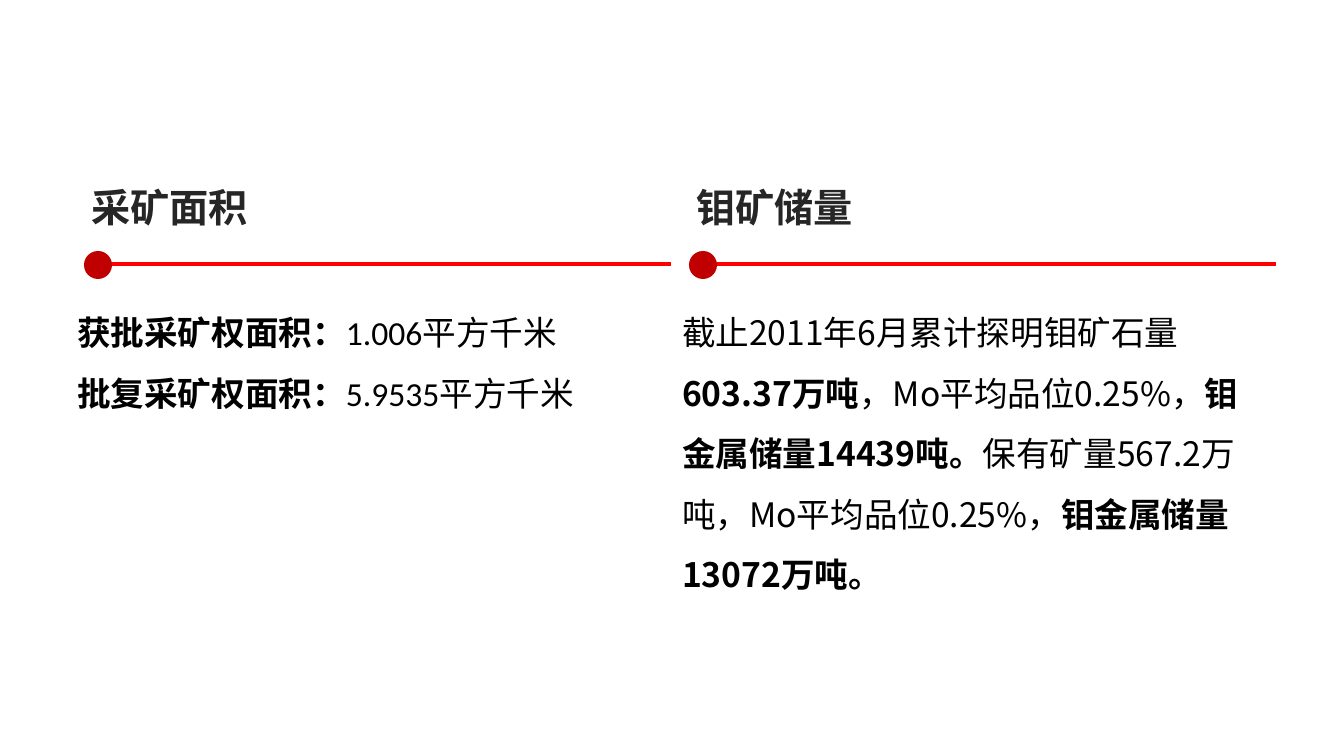
"""Build a two-column slide on mining area and molybdenum reserves."""
from lxml import etree
from pptx import Presentation
from pptx import util as u
from pptx.dml.color import RGBColor
from pptx.enum import shapes, text
from pptx.oxml import ns

PX = 914400 / 100.8
RED = RGBColor(0xFF, 0x00, 0x00)
DARK_RED = RGBColor(0xC0, 0x00, 0x00)
BLACK = RGBColor(0x00, 0x00, 0x00)
CHARCOAL = RGBColor(0x26, 0x26, 0x26)
CJK_FONT = "Noto Sans CJK SC"
COLUMN_STEP = 605


def px(*lengths):
    return [u.Emu(round(length * PX)) for length in lengths]


def write_text(shape, paragraphs, box, size=24, color=BLACK, latin=CJK_FONT,
               spacing=1.5, align=text.PP_ALIGN.LEFT):
    """Place a text shape and fill it with (wording, bold) runs."""
    shape.left, shape.top, shape.width, shape.height = px(*box)
    frame = shape.text_frame
    frame.word_wrap = True
    frame.auto_size = text.MSO_AUTO_SIZE.NONE
    frame.vertical_anchor = text.MSO_ANCHOR.TOP
    for index, runs in enumerate(paragraphs):
        paragraph = frame.add_paragraph() if index else frame.paragraphs[0]
        properties = paragraph._p.get_or_add_pPr()
        properties.set("marL", "0")
        properties.set("indent", "0")
        etree.SubElement(properties, ns.qn("a:buNone"))
        paragraph.alignment = align
        paragraph.line_spacing = spacing
        paragraph.space_before = paragraph.space_after = u.Pt(0)
        for wording, bold in runs:
            run = paragraph.add_run()
            run.text = wording
            run.font.size = u.Pt(size)
            run.font.bold = bold
            run.font.color.rgb = color
            run.font.name = CJK_FONT if bold else latin
            east_asian = etree.SubElement(run._r.get_or_add_rPr(), ns.qn("a:ea"))
            east_asian.set("typeface", CJK_FONT)


presentation = Presentation()
presentation.slide_width, presentation.slide_height = px(1344, 756)
slide = presentation.slides.add_slide(presentation.slide_layouts.get_by_name("Comparison"))
title = slide.shapes.title
title.element.getparent().remove(title.element)

area = [
    [("获批采矿权面积：", True), ("1.006平方千米", False)],
    [("批复采矿权面积：", True), ("5.9535平方千米", False)],
]
reserves = [[
    ("截止2011年6月累计探明钼矿石量", False),
    ("603.37万吨", True),
    ("，Mo平均品位0.25%，", False),
    ("钼金属储量14439吨。", True),
    ("保有矿量567.2万吨，Mo平均品位0.25%，", False),
    ("钼金属储量13072万吨。", True),
]]
columns = [
    ("采矿面积", area, "Calibri", 126),
    ("钼矿储量", reserves, CJK_FONT, 308),
]

for number, (heading, body, latin, body_height) in enumerate(columns):
    shift = number * COLUMN_STEP
    heading_shape = slide.placeholders[1 + 2 * number]
    body_shape = slide.placeholders[2 + 2 * number]
    write_text(heading_shape, [[(heading, True)]], (81 + shift, 178, 207, 57),
               size=28, color=CHARCOAL, spacing=1.0, align=text.PP_ALIGN.JUSTIFY)
    write_text(body_shape, body, (67 + shift, 287, 591, body_height), latin=latin)

    rule = slide.shapes.add_connector(
        shapes.MSO_CONNECTOR.STRAIGHT, *px(87 + shift, 264, 671 + shift, 264))
    rule.line.color.rgb = RED
    rule.line.width = u.Pt(2.25)
    etree.SubElement(rule._element.spPr, ns.qn("a:effectLst"))

    dot = slide.shapes.add_shape(shapes.MSO_SHAPE.OVAL, *px(84 + shift, 251, 28, 28))
    dot.shadow.inherit = False
    dot.fill.solid()
    dot.fill.fore_color.rgb = DARK_RED
    dot.line.fill.background()

presentation.save("out.pptx")
